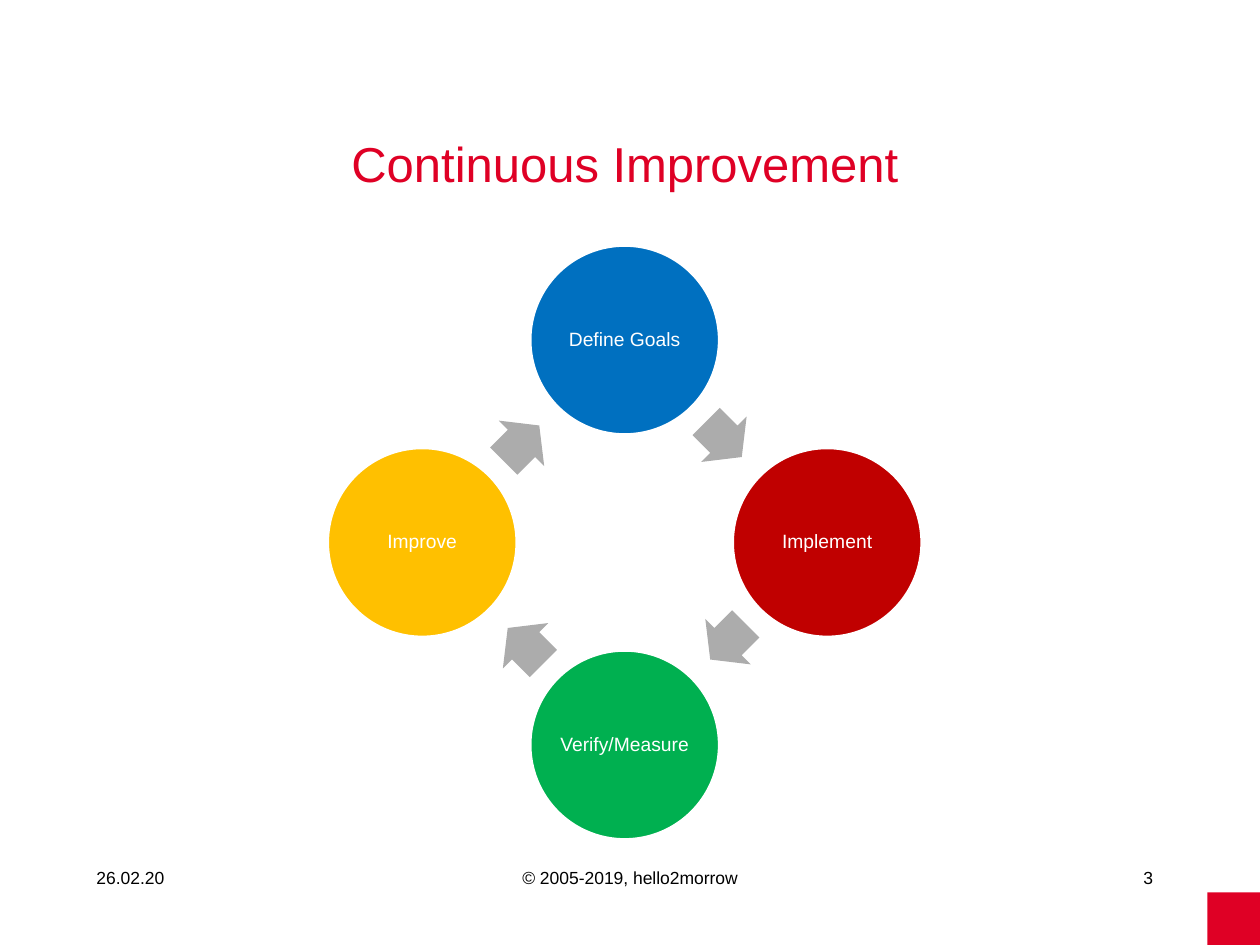
from pptx import Presentation
from pptx.dml.color import RGBColor
from pptx.enum.shapes import MSO_SHAPE
from pptx.enum.text import MSO_ANCHOR, PP_ALIGN
from pptx.util import Pt

COLORS = {
    "red": "DF0025", "white": "FFFFFF", "black": "000000", "arrow": "ACACAC",
    "goals": "0070C0", "implement": "C00000", "verify": "00B050",
    "improve": "FFC000",
}
FONT = "Arial"
WIDTH, HEIGHT = 720, 540


def color(name):
    return RGBColor.from_string(COLORS[name])


class SlideBuilder:
    def __init__(self, slide):
        self.s = slide

    def add_text(self, sp, text, size, color_name, align, anchor):
        tf = sp.text_frame
        tf.word_wrap = True
        tf.vertical_anchor = anchor
        p = tf.paragraphs[0]
        p.alignment = align
        r = p.add_run()
        r.text = text
        r.font.size = Pt(size)
        r.font.name = FONT
        r.font.color.rgb = color(color_name)
        return tf

    def title(self, text, x, y, w, h):
        sp = self.s.shapes.title
        sp.left, sp.top, sp.width, sp.height = Pt(x), Pt(y), Pt(w), Pt(h)
        self.add_text(sp, text, 28, "red", PP_ALIGN.CENTER, MSO_ANCHOR.MIDDLE)

    def shape(self, kind, cx, cy, w, h, fill):
        sp = self.s.shapes.add_shape(
            kind, Pt(cx - w / 2), Pt(cy - h / 2), Pt(w), Pt(h))
        sp.shadow.inherit = False
        sp.fill.solid()
        sp.fill.fore_color.rgb = color(fill)
        sp.line.fill.background()
        return sp

    def circle(self, text, cx, cy, size, fill):
        sp = self.shape(MSO_SHAPE.OVAL, cx, cy, size, size, fill)
        sp.line.color.rgb = color("white")
        sp.line.width = Pt(2)
        tf = self.add_text(sp, text, 11, "white", PP_ALIGN.CENTER, MSO_ANCHOR.MIDDLE)
        tf.margin_left = tf.margin_right = Pt(1.1)
        tf.margin_top = tf.margin_bottom = Pt(1.1)
        tf.paragraphs[0].line_spacing = 0.9

    def arrow(self, cx, cy, rotation):
        sp = self.shape(MSO_SHAPE.RIGHT_ARROW, cx, cy, 28.8, 36.7, "arrow")
        sp.adjustments[0] = 0.6
        sp.adjustments[1] = 0.5
        sp.rotation = rotation

    def footer(self, text, x, w, align):
        sp = self.s.shapes.add_textbox(Pt(x), Pt(492), Pt(w), Pt(36))
        self.add_text(sp, text, 10, "black", align, MSO_ANCHOR.TOP)


def main():
    prs = Presentation()
    prs.slide_width, prs.slide_height = Pt(WIDTH), Pt(HEIGHT)
    slide = SlideBuilder(prs.slides.add_slide(prs.slide_layouts[5]))

    corner = 30
    slide.shape(MSO_SHAPE.RECTANGLE, WIDTH - corner / 2, HEIGHT - corner / 2,
                corner, corner, "red")
    slide.title("Continuous Improvement", 48, 60, 618, 66)

    cx, cy, radius = 357, 310, 115.7
    steps = [
        ("Define Goals", "goals", 0, -1),
        ("Implement", "implement", 1, 0),
        ("Verify/Measure", "verify", 0, 1),
        ("Improve", "improve", -1, 0),
    ]
    near, far = 0.51 * radius, 0.49 * radius
    for i, (text, fill, dx, dy) in enumerate(steps):
        slide.circle(text, cx + dx * radius, cy + dy * radius, 108.5, fill)
        next_dx, next_dy = steps[(i + 1) % len(steps)][2:]
        slide.arrow(cx + dx * near + next_dx * far,
                    cy + dy * near + next_dy * far, 45 + 90 * i)

    slide.footer("26.02.20", 48, 156, PP_ALIGN.LEFT)
    slide.footer("© 2005-2019, hello2morrow", 246, 228, PP_ALIGN.CENTER)
    slide.footer("3", 516, 150, PP_ALIGN.RIGHT)
    prs.save("out.pptx")


if __name__ == "__main__":
    main()
